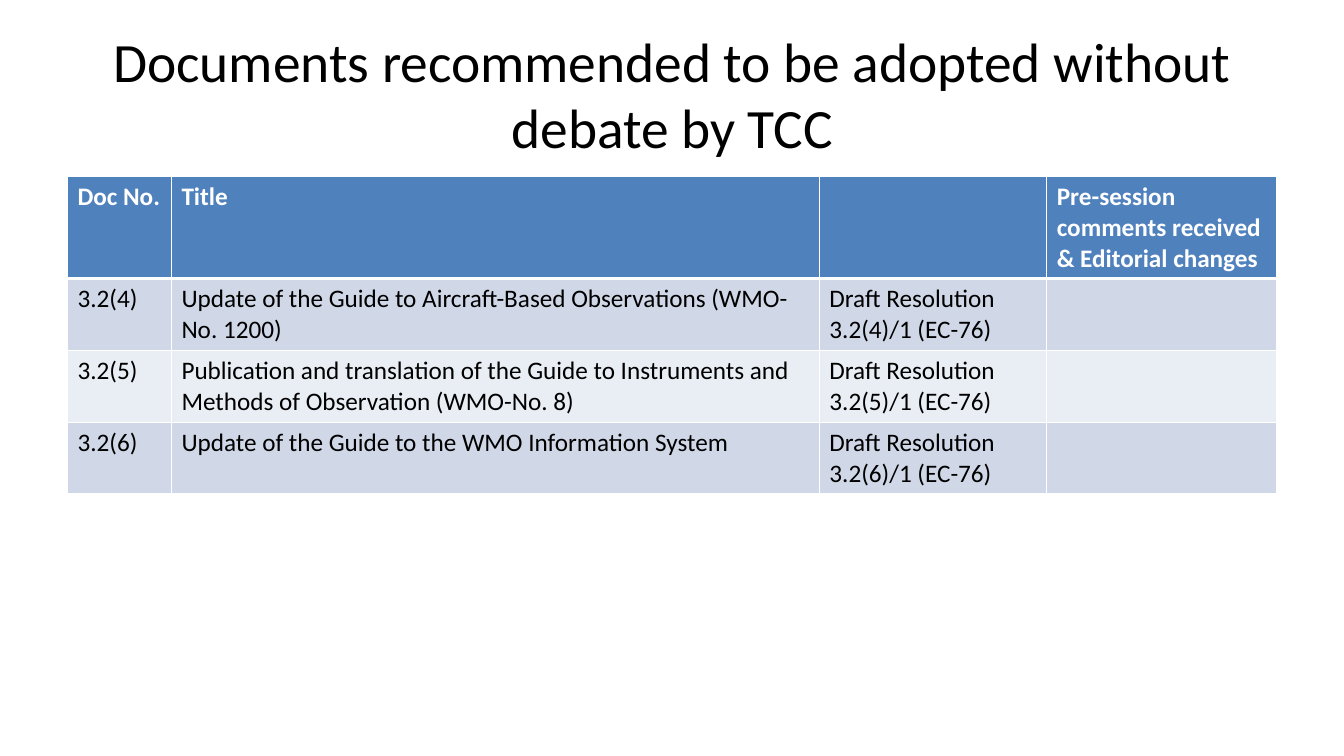
from lxml.etree import SubElement
from pptx import Presentation
from pptx.dml.color import RGBColor
from pptx.enum.text import MSO_ANCHOR, PP_ALIGN
from pptx.oxml.ns import qn
from pptx.util import Cm, Pt

WHITE = RGBColor(0xFF, 0xFF, 0xFF)
BLACK = RGBColor(0x00, 0x00, 0x00)
HEADER_BLUE = RGBColor(0x4F, 0x81, 0xBD)
BANDS = [RGBColor(0xD0, 0xD8, 0xE8), RGBColor(0xE9, 0xED, 0xF4)]

LEFT, WIDTH = 1.7, 30.48
COL_WIDTHS = [2.62, 16.33, 5.73, 5.8]
ROW_HEIGHTS = [2.57, 1.81, 1.81, 1.81]

HEADER = ["Doc No.", "Title", "",
          "Pre-session comments received\n& Editorial changes"]
DOCUMENTS = [
    ("3.2(4)", "Update of the Guide to Aircraft-Based Observations (WMO-No. 1200)"),
    ("3.2(5)", "Publication and translation of the Guide to Instruments and "
               "Methods of Observation (WMO-No. 8)"),
    ("3.2(6)", "Update of the Guide to the WMO Information System"),
]


class Deck:
    font = "Calibri"

    def __init__(self):
        self.prs = Presentation()
        self.prs.slide_width, self.prs.slide_height = Cm(33.87), Cm(19.05)
        self.s = self.prs.slides.add_slide(self.prs.slide_layouts[6])

    def set_text(self, tf, text, size, color, bold=False, align=PP_ALIGN.LEFT):
        tf.text = text
        style = {"name": self.font, "size": Pt(size), "bold": bold}
        for p in tf.paragraphs:
            p.alignment = align
            for name, value in style.items():
                setattr(p.font, name, value)
            p.font.color.rgb = color

    def title(self, text, left, top, width, height):
        sp = self.s.shapes.add_textbox(Cm(left), Cm(top), Cm(width), Cm(height))
        tf = sp.text_frame
        tf.word_wrap = True
        tf.vertical_anchor = MSO_ANCHOR.MIDDLE
        self.set_text(tf, text, 39.6, BLACK, align=PP_ALIGN.CENTER)

    def borders(self, cell, top, bottom):
        """Draw white cell borders; top and bottom are widths in points."""
        tc_pr = cell._tc.get_or_add_tcPr()
        widths = {"a:lnL": 1, "a:lnR": 1, "a:lnT": top, "a:lnB": bottom}
        for tag, width in widths.items():
            ln = SubElement(tc_pr, qn(tag), w=str(Pt(width)))
            fill = SubElement(ln, qn("a:solidFill"))
            SubElement(fill, qn("a:srgbClr"), val=str(WHITE))

    def table(self, rows, left, top):
        frame = self.s.shapes.add_table(
            len(rows), len(COL_WIDTHS), Cm(left), Cm(top),
            Cm(WIDTH), Cm(sum(ROW_HEIGHTS)))
        table = frame.table
        for column, width in zip(table.columns, COL_WIDTHS):
            column.width = Cm(width)
        for i, (row, height, texts) in enumerate(zip(table.rows, ROW_HEIGHTS, rows)):
            row.height = Cm(height)
            is_header = i == 0
            for cell, text in zip(row.cells, texts):
                self.set_text(cell.text_frame, text, 18,
                              WHITE if is_header else BLACK, bold=is_header)
                self.borders(cell, 3 if i == 1 else 1, 3 if is_header else 1)
                cell.fill.solid()
                cell.fill.fore_color.rgb = HEADER_BLUE if is_header else BANDS[(i - 1) % 2]


def main():
    deck = Deck()
    deck.title("Documents recommended to be adopted without debate by TCC",
               LEFT, 0.76, WIDTH, 3.18)
    rows = [(number, title, f"Draft Resolution {number}/1 (EC-76)", "")
            for number, title in DOCUMENTS]
    deck.table([HEADER] + rows, LEFT, 4.45)
    deck.prs.save("out.pptx")


if __name__ == "__main__":
    main()
